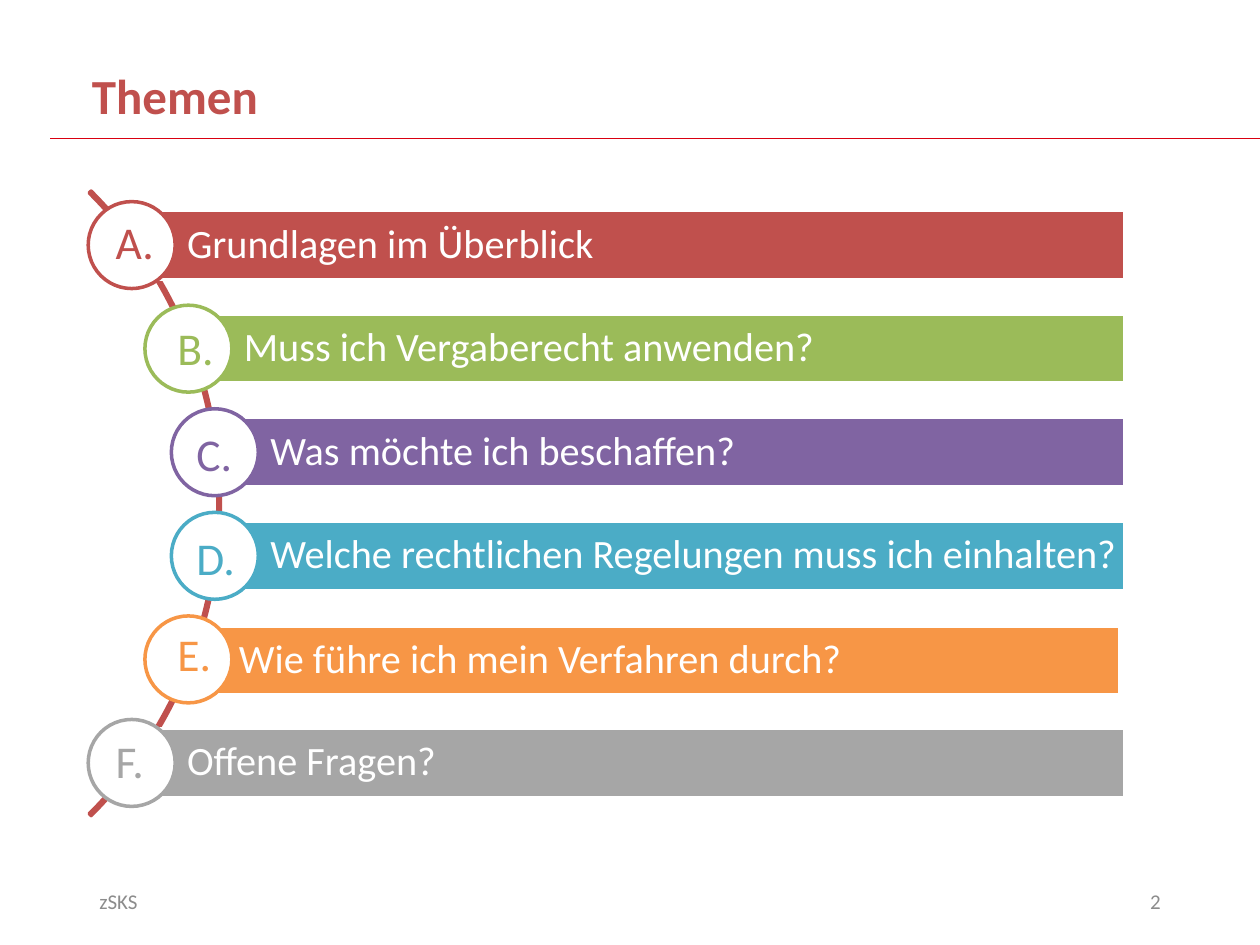
import dataclasses
import lxml.etree
import pptx
import pptx.dml.color
import pptx.enum.shapes
import pptx.enum.text
import pptx.oxml.ns
import pptx.util

Inches = pptx.util.Inches
Shape = pptx.enum.shapes.MSO_SHAPE
Align = pptx.enum.text.PP_ALIGN
Anchor = pptx.enum.text.MSO_ANCHOR


@dataclasses.dataclass(frozen=True)
class Theme:
    """Colours, font and type sizes of the slide."""
    font: str = "Calibri"
    red: str = "C0504D"
    green: str = "9BBB59"
    plum: str = "8064A2"
    teal: str = "4BACC6"
    gold: str = "F79646"
    gray: str = "A6A6A6"
    white: str = "FFFFFF"
    rule: str = "D90011"
    muted: str = "8C8C8C"
    title: int = 28
    mark: int = 26
    topic: int = 23
    small: int = 12


@dataclasses.dataclass(frozen=True)
class Topic:
    """One row: its words, colour, circle left, letter offset and bar shift."""
    letter: str
    text: str
    color: str
    left: float
    inset: tuple
    shift: tuple = (0, 0)


THEME = Theme()
TOPICS = [
    Topic("A.", "Grundlagen im Überblick", THEME.red, 0.7, (0.12, 0.05)),
    Topic("B.", "Muss ich Vergaberecht anwenden?", THEME.green, 1.15, (0.16, 0.07)),
    Topic("C.", "Was möchte ich beschaffen?", THEME.plum, 1.36, (0.1, 0.09)),
    Topic("D.", "Welche rechtlichen Regelungen muss ich einhalten?", THEME.teal, 1.36,
          (0.1, 0.09)),
    Topic("E.", "Wie führe ich mein Verfahren durch?", THEME.gold, 1.15, (0.16, 0.03),
          (-0.04, 0.01)),
    Topic("F.", "Offene Fragen?", THEME.gray, 0.7, (0.12, 0.06)),
]


def paint(color):
    """Turn a hex string into a colour."""
    return pptx.dml.color.RGBColor.from_string(color)


def write(frame, text, size, color, bold=False, align=Align.LEFT, anchor=Anchor.TOP):
    """Write one styled run into a text frame."""
    frame.word_wrap = True
    frame.vertical_anchor = anchor
    para = frame.paragraphs[0]
    para.alignment = align
    run = para.add_run()
    run.text = text
    run.font.name = THEME.font
    run.font.size = pptx.util.Pt(size)
    run.font.bold = bold
    run.font.color.rgb = paint(color)
    return para


def add_form(slide, kind, box, line, fill=None):
    """Add a flat preset shape in a box given in inches."""
    form = slide.shapes.add_shape(kind, *map(Inches, box))
    form.shadow.inherit = False
    if fill:
        form.fill.solid()
        form.fill.fore_color.rgb = paint(fill)
    else:
        form.fill.background()
    form.line.color.rgb = paint(line)
    form.line.width = pptx.util.Pt(2)
    return form


def add_text(slide, box, text, size, color, **style):
    """Add a text box in a box given in inches."""
    area = slide.shapes.add_textbox(*map(Inches, box))
    write(area.text_frame, text, size, color, **style)


def add_head(slide, box):
    """Place the title in its box and the rule below it."""
    title = slide.shapes.title
    title.left, title.top, title.width, title.height = map(Inches, box)
    write(title.text_frame, "Themen", THEME.title, THEME.red, bold=True)
    level = Inches(1.1)
    rule = slide.shapes.add_connector(
        pptx.enum.shapes.MSO_CONNECTOR.STRAIGHT, Inches(0.4), level, Inches(10), level)
    rule.line.color.rgb = paint(THEME.rule)
    rule.line.width = pptx.util.Pt(1)
    lxml.etree.SubElement(
        rule._element.spPr, pptx.oxml.ns.qn("a:effectLst"))


def add_topic(slide, box, topic):
    """Place one bar with its circle and letter in a row box."""
    left, top, width, size = box
    right, down = topic.inset
    dx, dy = topic.shift
    bar = add_form(
        slide, Shape.RECTANGLE,
        (left + size / 2 + dx, top + 0.07 + dy, width - size / 2, 0.55),
        THEME.white, topic.color)
    frame = bar.text_frame
    frame.margin_left = Inches(0.44)
    frame.margin_top = frame.margin_bottom = Inches(0.06)
    frame.margin_right = 0
    para = write(frame, topic.text, THEME.topic, THEME.white, anchor=Anchor.MIDDLE)
    para.line_spacing = 0.9
    add_form(slide, Shape.OVAL, (left, top, size, size), topic.color, THEME.white)
    add_text(slide, (left + right, top + down, 0.71, 0.54), topic.letter,
             THEME.mark, topic.color)


def add_list(slide, box):
    """Place the arc and the topic rows along it."""
    left, top, width, height = box
    size = 0.69
    pitch = (height - size) / (len(TOPICS) - 1)
    arc = add_form(slide, Shape.BLOCK_ARC, (-5.26, 0.49, 7.01, 7.01), THEME.red)
    for index, value in enumerate((189, 27, 0.003)):
        arc.adjustments[index] = value
    for index, topic in enumerate(TOPICS):
        row = (topic.left, top + index * pitch, left + width - topic.left, size)
        add_topic(slide, row, topic)


def add_foot(slide, box):
    """Place the footer and the page number at the ends of a box."""
    left, top, width, height = box
    part = 2.25
    style = {"size": THEME.small, "color": THEME.muted, "anchor": Anchor.MIDDLE}
    add_text(slide, (left, top, part, height), "zSKS", **style)
    add_text(slide, (left + width - part, top, part, height), "2",
             align=Align.RIGHT, **style)


def main():
    """Build and save the slide."""
    deck = pptx.Presentation()
    deck.slide_width, deck.slide_height = Inches(10), Inches(7.5)
    slide = deck.slides.add_slide(deck.slide_layouts[5])
    add_head(slide, (0.63, 0.47, 7.74, 0.57))
    add_list(slide, (0.7, 1.6, 8.23, 4.8))
    add_foot(slide, (0.69, 6.95, 8.62, 0.4))
    deck.save("out.pptx")


if __name__ == "__main__":
    main()
